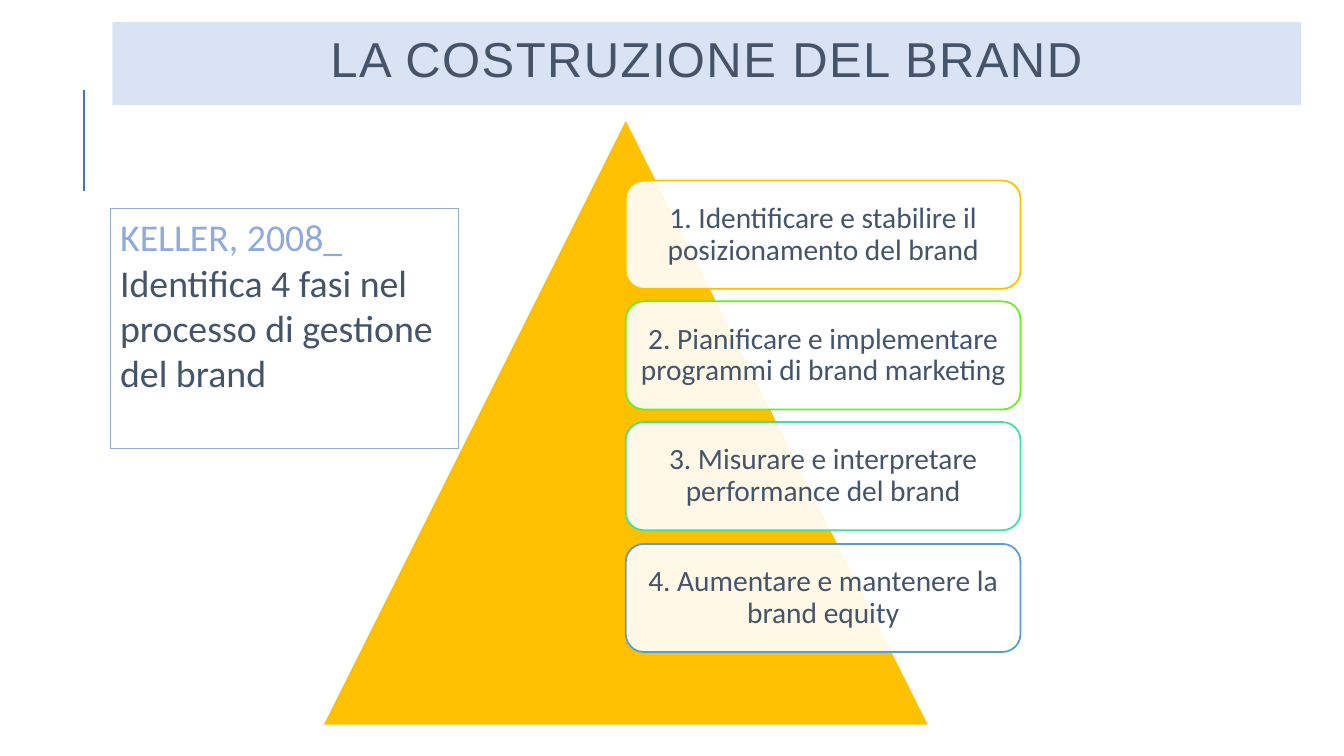
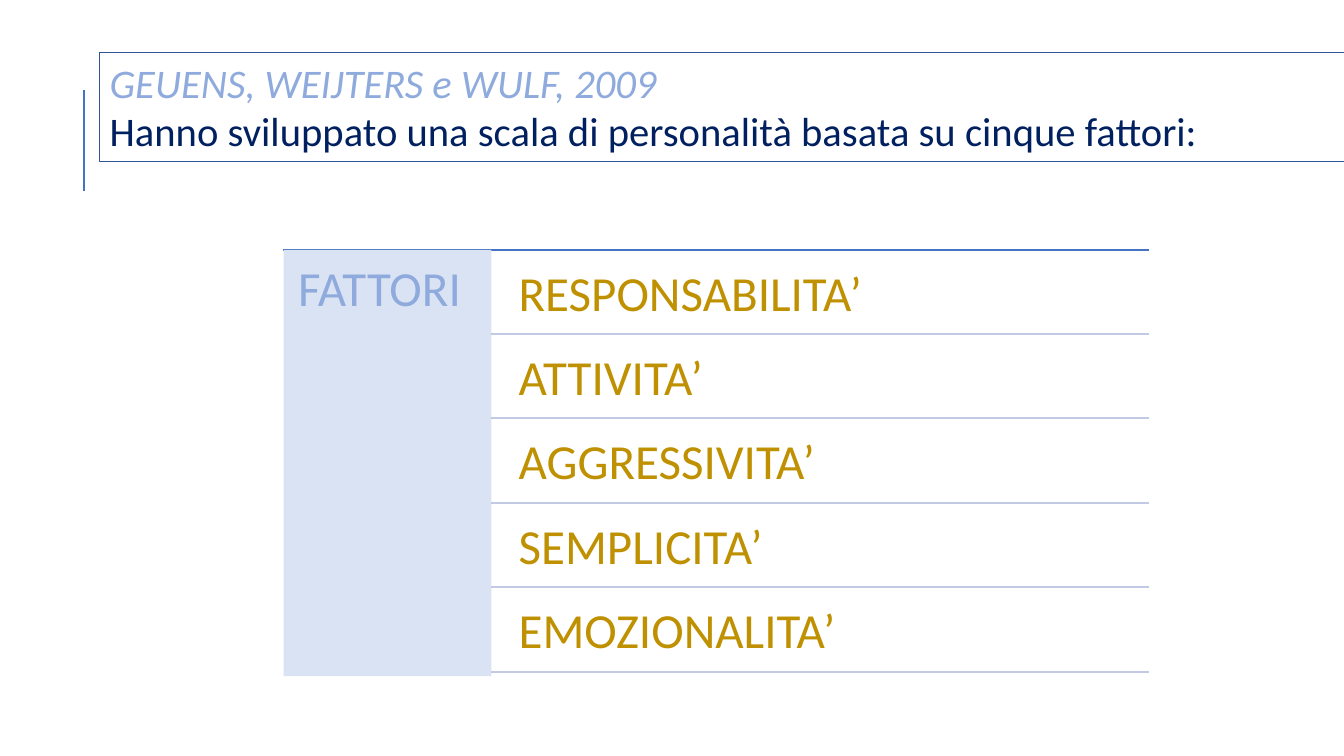
from lxml.etree import SubElement
from pptx import Presentation
from pptx.dml.color import RGBColor
from pptx.enum.shapes import MSO_CONNECTOR, MSO_SHAPE
from pptx.enum.text import MSO_ANCHOR, MSO_AUTO_SIZE, PP_ALIGN
from pptx.oxml.ns import qn
from pptx.util import Emu, Pt

EMU_PER_PX = 9525
TITLE_ONLY, BLANK = 5, 6

COLORS = {
    "white": "FFFFFF",
    "slate": "44546A",
    "navy": "002060",
    "blue": "4472C4",
    "dark_blue": "2F5597",
    "soft_blue": "8FAADC",
    "pale_blue": "DAE3F3",
    "rule": "C1C9E4",
    "gold": "FFC000",
    "dark_gold": "BF9000",
    "green": "67EF21",
    "mint": "3FE19B",
    "sky": "5B9BD5",
}

PHASES = [
    ("1. Identificare e stabilire il posizionamento del brand", "gold"),
    ("2. Pianificare e implementare programmi di brand marketing", "green"),
    ("3. Misurare e interpretare performance del brand", "mint"),
    ("4. Aumentare e mantenere la brand equity", "sky"),
]
FACTORS = ["RESPONSABILITA’", "ATTIVITA’", "AGGRESSIVITA’", "SEMPLICITA’", "EMOZIONALITA’"]


def px(n):
    return Emu(n * EMU_PER_PX)


def rgb(name):
    return RGBColor.from_string(COLORS[name])


def spread(first, last, count):
    """Return count whole positions at equal steps from first to last."""
    return [first + (last - first) * i // (count - 1) for i in range(count)]


def set_fill(sp, color, opacity=100):
    sp.fill.solid()
    sp.fill.fore_color.rgb = rgb(color)
    if opacity < 100:
        clr = sp.fill._xPr.find(qn("a:solidFill"))[0]
        SubElement(clr, qn("a:alpha"), val=str(opacity * 1000))


def add_box(slide, x, y, w, h, fill, line=None, width=0.75, shape=MSO_SHAPE.RECTANGLE, opacity=100):
    sp = slide.shapes.add_shape(shape, px(x), px(y), px(w), px(h))
    sp.shadow.inherit = False
    set_fill(sp, fill, opacity)
    if line:
        sp.line.color.rgb = rgb(line)
        sp.line.width = Pt(width)
    else:
        sp.line.fill.background()
    return sp


def add_line(slide, x1, y1, x2, y2, color, width=1.25):
    line = slide.shapes.add_connector(MSO_CONNECTOR.STRAIGHT, px(x1), px(y1), px(x2), px(y2))
    line.line.color.rgb = rgb(color)
    line.line.width = Pt(width)
    SubElement(line.element.spPr, qn("a:effectLst"))
    return line


def set_frame(sp, anchor=MSO_ANCHOR.TOP, inset=None):
    tf = sp.text_frame
    tf.word_wrap = True
    tf.auto_size = MSO_AUTO_SIZE.NONE
    tf.vertical_anchor = anchor
    if inset is not None:
        tf.margin_left = tf.margin_right = tf.margin_top = tf.margin_bottom = px(inset)
    return tf


def add_text(p, text, size, color, font="Calibri", italic=False, align=PP_ALIGN.LEFT,
             line_spacing=1.0, tracking=0):
    """Add a formatted run to a paragraph; tracking is in points."""
    p.alignment = align
    p.line_spacing = line_spacing
    r = p.add_run()
    r.text = text
    r.font.name = font
    r.font.size = Pt(size)
    r.font.italic = italic
    r.font.color.rgb = rgb(color)
    if tracking:
        r.font._element.set("spc", str(tracking * 100))


def move_to_master(prs, line):
    """Let every slide show the line by moving it to the master."""
    line.element.nvCxnSpPr.cNvPr.set("id", "100")
    prs.slide_master.element.cSld.spTree.append(line.element)


def set_title(slide, text):
    sp = slide.shapes.title
    sp.left, sp.top, sp.width, sp.height = px(107), px(21), px(1132), px(79)
    set_fill(sp, "pale_blue")
    tf = set_frame(sp, MSO_ANCHOR.MIDDLE)
    add_text(tf.paragraphs[0], text, 35, "slate", font="Arial", align=PP_ALIGN.CENTER,
             line_spacing=0.8, tracking=1)


def add_phase_card(slide, y, text, line):
    sp = add_box(slide, 596, y, 376, 103, "white", line, 1.25,
                 MSO_SHAPE.ROUNDED_RECTANGLE, opacity=90)
    tf = set_frame(sp, MSO_ANCHOR.MIDDLE, inset=8)
    add_text(tf.paragraphs[0], text, 21, "slate", align=PP_ALIGN.CENTER, line_spacing=0.9)


def add_label(slide, x, y, w, h, text, color):
    sp = slide.shapes.add_textbox(px(x), px(y), px(w), px(h))
    tf = set_frame(sp, inset=14)
    add_text(tf.paragraphs[0], text, 35, color, line_spacing=0.9)


def build_phases(prs):
    slide = prs.slides.add_slide(prs.slide_layouts[TITLE_ONLY])
    set_title(slide, "LA COSTRUZIONE DEL BRAND")
    add_box(slide, 307, 113, 578, 578, "gold", "white", 1.25, MSO_SHAPE.ISOSCELES_TRIANGLE)
    for y, (text, line) in zip(spread(172, 518, len(PHASES)), PHASES):
        add_phase_card(slide, y, text, line)

    note = add_box(slide, 105, 199, 332, 228, "white", "soft_blue")
    p = set_frame(note).paragraphs[0]
    add_text(p, "KELLER, 2008_ ", 27, "soft_blue")
    add_text(p, "Identifica 4 fasi nel processo di gestione del brand", 27, "slate")


def build_factors(prs):
    slide = prs.slides.add_slide(prs.slide_layouts[BLANK])
    header = add_box(slide, 95, 50, 1186, 104, "white", "dark_blue")
    tf = set_frame(header)
    add_text(tf.paragraphs[0], "GEUENS, WEIJTERS e WULF, 2009", 29, "soft_blue", italic=True)
    add_text(tf.add_paragraph(),
             "Hanno sviluppato una scala di personalità basata su cinque fattori:", 29, "navy")

    left, split, right, top, bottom = 270, 468, 1094, 238, 640
    add_line(slide, left, top, right, top, "blue")
    add_box(slide, left, top, split - left, 406, "pale_blue")
    add_label(slide, left, top, split - left, 406, "FATTORI", "soft_blue")
    rules = spread(top, bottom, len(FACTORS) + 1)
    for text, above, below in zip(FACTORS, rules, rules[1:]):
        add_label(slide, split + 12, above + 4, right - split - 12, 77, text, "dark_gold")
        add_line(slide, split, below, right, below, "rule")


def main():
    prs = Presentation()
    prs.slide_width, prs.slide_height = px(1280), px(720)
    build_phases(prs)
    build_factors(prs)
    move_to_master(prs, add_line(prs.slides[0], 80, 182, 80, 86, "blue", 1.5))
    prs.save("out.pptx")


if __name__ == "__main__":
    main()
